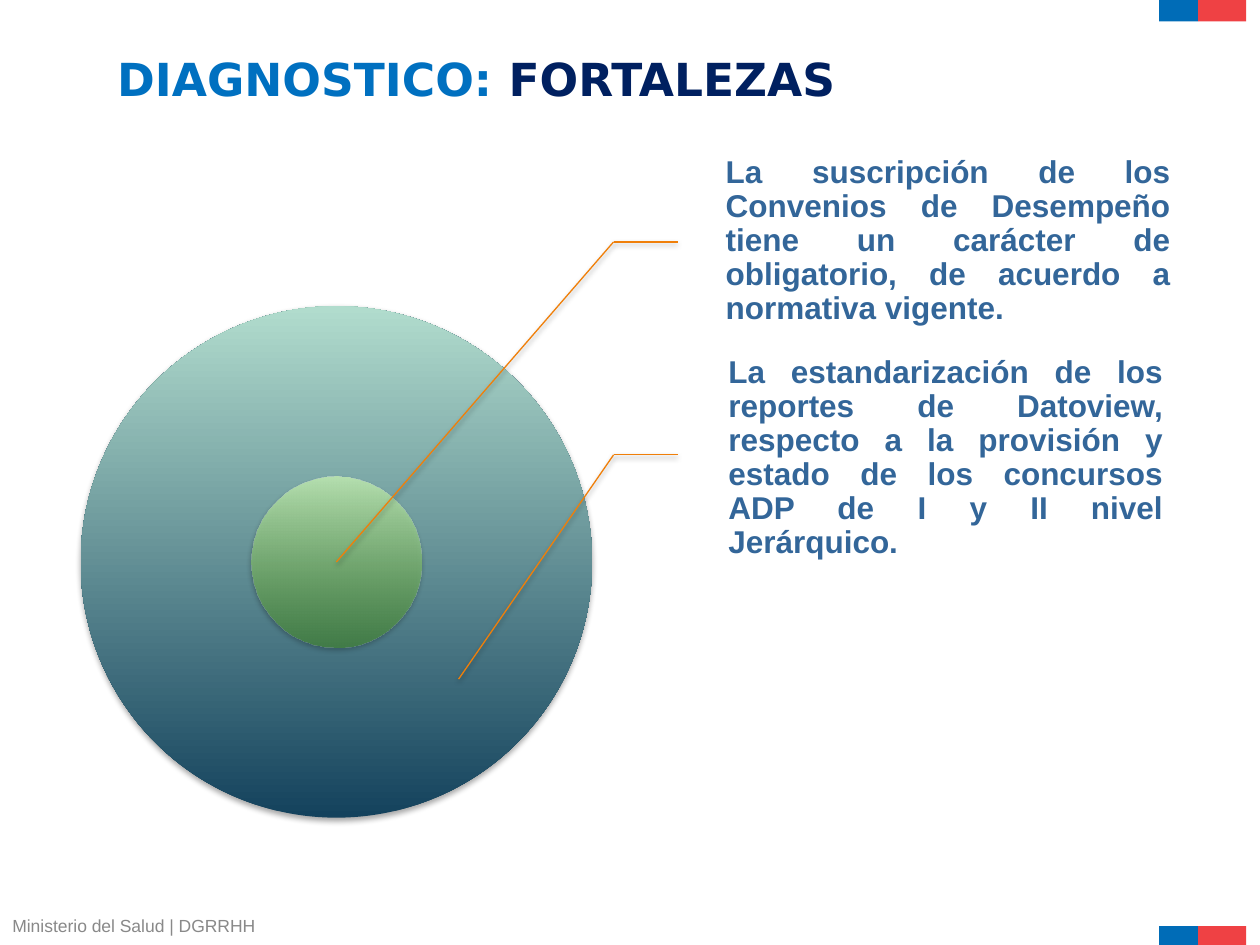
from dataclasses import dataclass

import lxml.etree
import pptx
import pptx.dml.color
import pptx.enum.shapes
import pptx.enum.text
import pptx.oxml.ns
import pptx.util
from pptx.dml.color import RGBColor
from pptx.util import Inches

BLUE = RGBColor(0x00, 0x6C, 0xB7)
RED = RGBColor(0xEF, 0x41, 0x44)
GREY = RGBColor(0x89, 0x89, 0x89)
ORANGE = RGBColor(0xF0, 0x7F, 0x09)
TEXT_BLUE = RGBColor(0x33, 0x66, 0x99)
TITLE_BLUE = RGBColor(0x00, 0x70, 0xC0)
TITLE_NAVY = RGBColor(0x00, 0x20, 0x60)
BLACK = RGBColor(0, 0, 0)

CENTER_X, CENTER_Y = 2.67, 4.46
ELBOW_X, LABEL_EDGE_X = 4.87, 5.38


@dataclass
class Disc:
    diameter: float
    bottom_color: RGBColor
    top_color: RGBColor
    bottom_opacity: int = 100


@dataclass
class Strength:
    text: str
    left: float
    top: float
    width: float
    bottom_inset: float
    elbow_y: float
    target: tuple[float, float]


DISCS = [
    Disc(4.06, RGBColor(0x14, 0x42, 0x5D), RGBColor(0xB1, 0xDC, 0xCD)),
    Disc(1.35, RGBColor(0x48, 0x8F, 0x38), RGBColor(0xB5, 0xDF, 0xAF), 63),
]
STRENGTHS = [
    Strength("La suscripción de los Convenios de Desempeño tiene un carácter de "
             "obligatorio, de acuerdo a normativa vigente.",
             5.62, 1.07, 3.7, 0.03, 1.92, (CENTER_X, CENTER_Y)),
    Strength("La estandarización de los reportes de Datoview, respecto a la provisión "
             "y estado de los concursos ADP de I y II nivel Jerárquico.",
             5.64, 2.96, 3.62, 0.36, 3.61, (3.64, 5.39)),
]


def add_element(parent, tag: str, **attributes):
    return lxml.etree.SubElement(parent, pptx.oxml.ns.qn(tag), attributes)


def add_shadow(shape, opacity: int, distance: float) -> None:
    """Give a shape or connector a soft shadow straight below it."""
    effects = add_element(shape._element.spPr, "a:effectLst")
    shadow = add_element(effects, "a:outerShdw", blurRad=str(pptx.util.Pt(3.1)),
                         dist=str(pptx.util.Pt(distance)), dir="5400000", rotWithShape="0")
    color = add_element(shadow, "a:srgbClr", val=str(BLACK))
    add_element(color, "a:alpha", val=str(opacity * 1000))


def add_block(page, left: float, top: float, width: float, color: RGBColor) -> None:
    block = page.shapes.add_shape(pptx.enum.shapes.MSO_SHAPE.RECTANGLE, Inches(left),
                                  Inches(top), Inches(width), Inches(0.17))
    block.fill.solid()
    block.fill.fore_color.rgb = color
    block.line.fill.background()
    block.shadow.inherit = False


def add_disc(page, disc: Disc) -> None:
    radius = disc.diameter / 2
    circle = page.shapes.add_shape(
        pptx.enum.shapes.MSO_SHAPE.OVAL, Inches(CENTER_X - radius),
        Inches(CENTER_Y - radius), Inches(disc.diameter), Inches(disc.diameter))
    circle.fill.gradient()
    circle.fill.gradient_angle = 90
    bottom, top = circle.fill.gradient_stops
    bottom.color.rgb = disc.bottom_color
    top.color.rgb = disc.top_color
    if disc.bottom_opacity < 100:
        color = circle._element.spPr.find(".//" + pptx.oxml.ns.qn("a:srgbClr"))
        add_element(color, "a:alpha", val=str(disc.bottom_opacity * 1000))
    circle.line.fill.background()
    add_shadow(circle, 35, 1.8)


def add_leader(page, start: tuple[float, float], end: tuple[float, float]) -> None:
    leader = page.shapes.add_connector(pptx.enum.shapes.MSO_CONNECTOR.STRAIGHT,
                                       *map(Inches, start + end))
    leader.line.color.rgb = ORANGE
    leader.line.width = pptx.util.Pt(0.75)
    add_shadow(leader, 38, 1.6)


def add_strength(page, strength: Strength) -> None:
    box = page.shapes.add_textbox(Inches(strength.left), Inches(strength.top),
                                  Inches(strength.width), Inches(1.69))
    frame = box.text_frame
    frame.word_wrap = True
    frame.vertical_anchor = pptx.enum.text.MSO_ANCHOR.MIDDLE
    frame.margin_left = Inches(0.14)
    frame.margin_top = frame.margin_right = Inches(0.03)
    frame.margin_bottom = Inches(strength.bottom_inset)
    para = frame.paragraphs[0]
    para.text = strength.text
    para.alignment = pptx.enum.text.PP_ALIGN.JUSTIFY
    para.line_spacing = 0.9
    set_font(para, "Arial", 18, TEXT_BLUE, True)

    elbow = (ELBOW_X, strength.elbow_y)
    add_leader(page, elbow, (LABEL_EDGE_X, strength.elbow_y))
    add_leader(page, elbow, strength.target)


def set_font(para, name: str, size: float, color: RGBColor, bold: bool) -> None:
    para.font.name = name
    para.font.size = pptx.util.Pt(size)
    para.font.color.rgb = color
    para.font.bold = bold


def add_title(page) -> None:
    title = page.shapes.title
    title.left, title.top = Inches(0.83), Inches(0.35)
    title.width, title.height = Inches(6.22), Inches(0.54)
    title.text_frame.auto_size = pptx.enum.text.MSO_AUTO_SIZE.NONE
    para = title.text_frame.paragraphs[0]
    para.alignment = pptx.enum.text.PP_ALIGN.LEFT
    set_font(para, "DejaVu Sans", 26, TITLE_BLUE, True)
    for text, color in (("DIAGNOSTICO: ", TITLE_BLUE), ("FORTALEZAS", TITLE_NAVY)):
        span = para.add_run()
        span.text = text
        span.font.color.rgb = color


def add_footer(page) -> None:
    box = page.shapes.add_textbox(Inches(0), Inches(7.21), Inches(2.13), Inches(0.27))
    box.text_frame.word_wrap = False
    para = box.text_frame.paragraphs[0]
    para.text = "Ministerio del Salud | DGRRHH"
    set_font(para, "Arial", 10, GREY, False)


def main() -> None:
    deck = pptx.Presentation()
    deck.slide_width, deck.slide_height = Inches(10), Inches(7.5)
    page = deck.slides.add_slide(deck.slide_layouts[5])

    # Colour bands at the top and bottom edges
    for top in (0, 7.35):
        add_block(page, 9.2, top, 0.31, BLUE)
        add_block(page, 9.51, top, 0.38, RED)
    add_footer(page)

    # Target diagram with its labels
    for disc in DISCS:
        add_disc(page, disc)
    for strength in STRENGTHS:
        add_strength(page, strength)

    add_title(page)
    deck.save("out.pptx")


if __name__ == "__main__":
    main()
